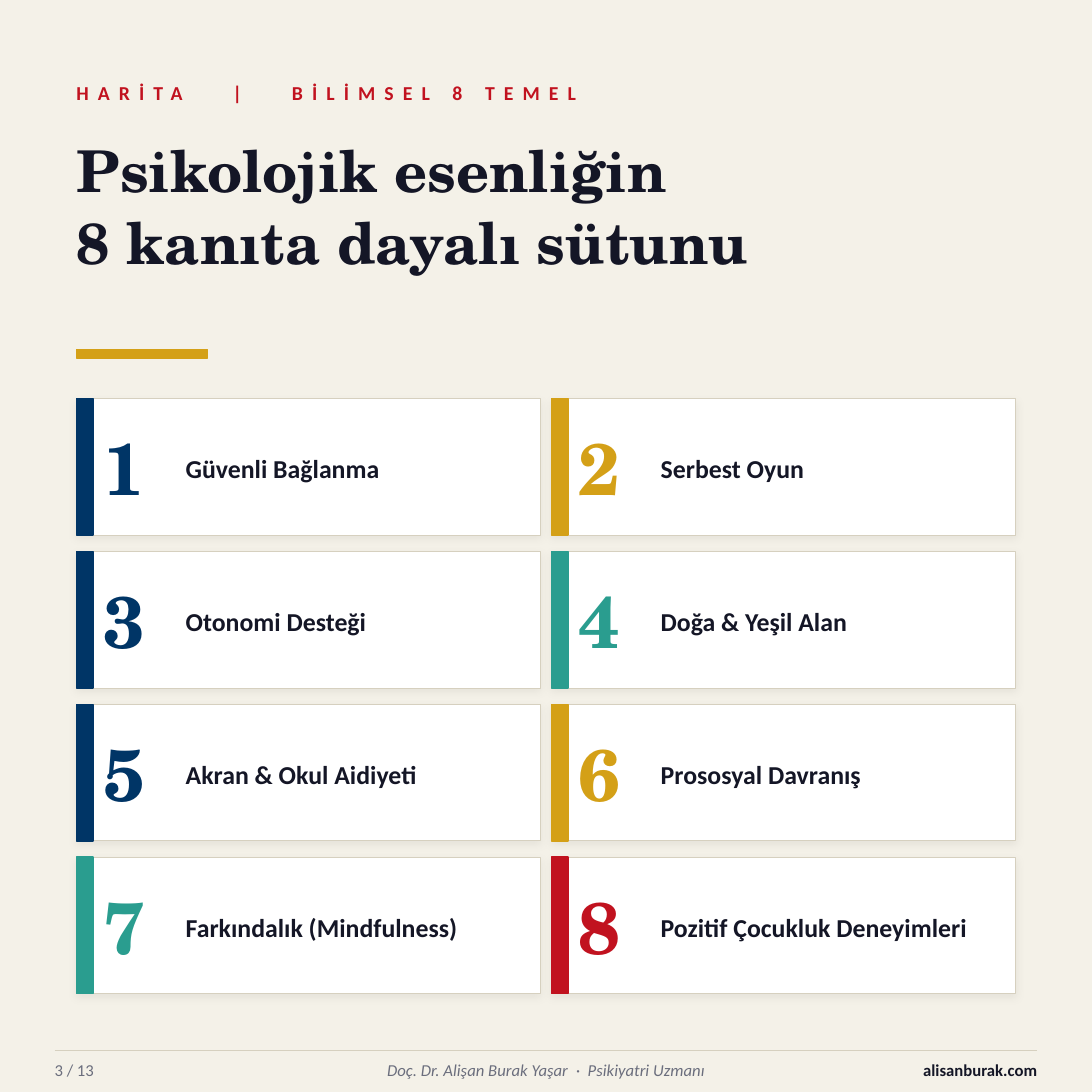
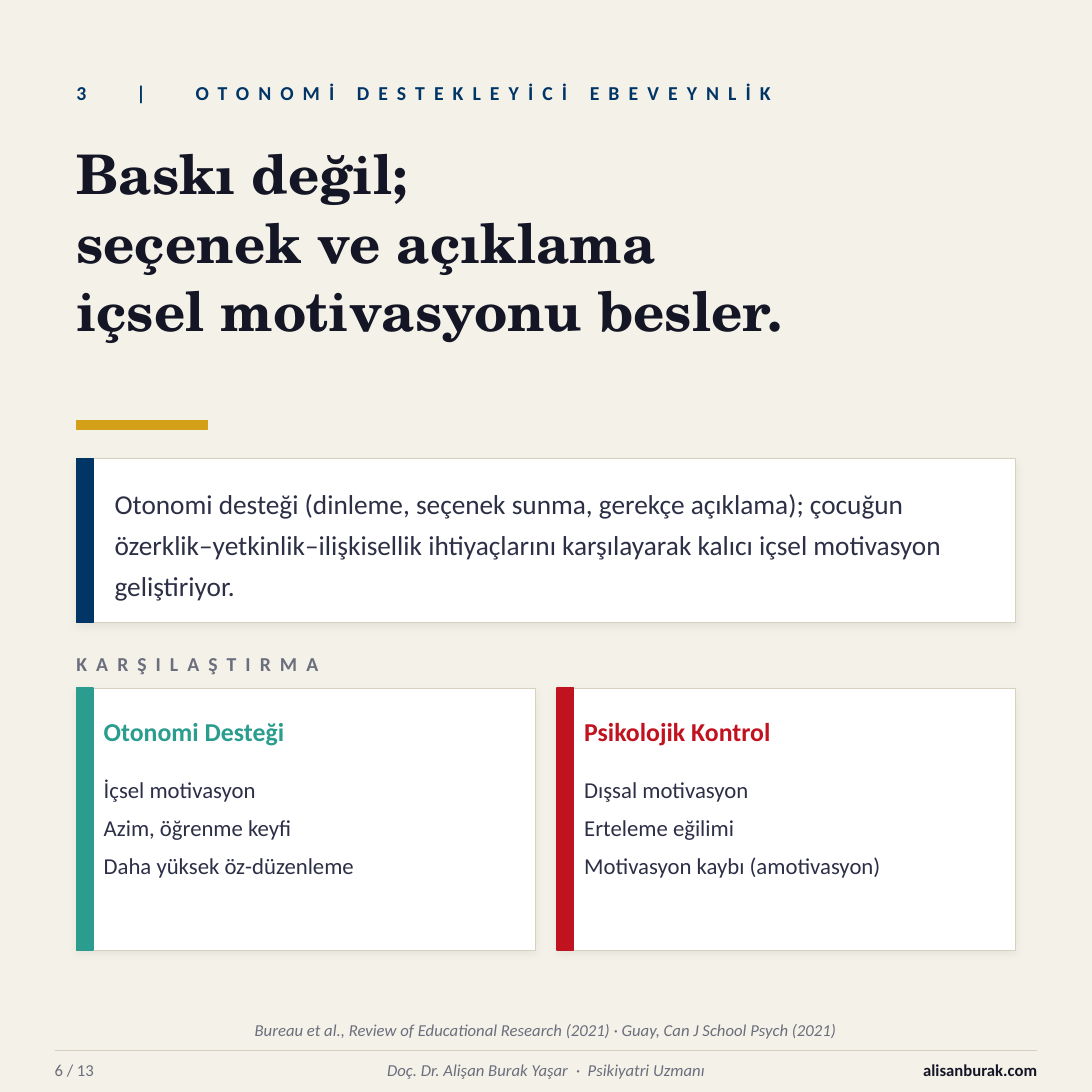
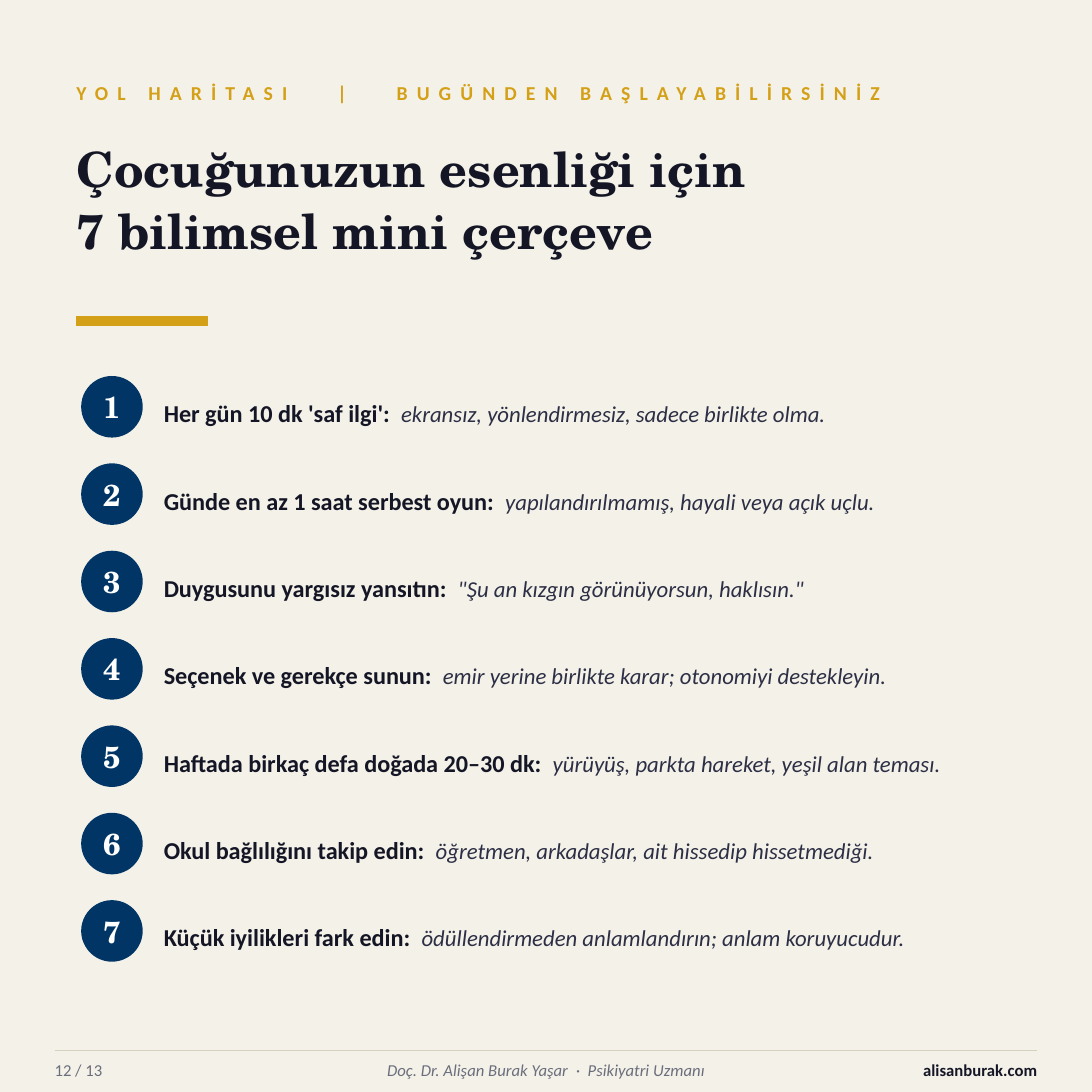
from dataclasses import dataclass

from lxml import etree
from pptx import Presentation
from pptx.dml.color import RGBColor
from pptx.enum.shapes import MSO_CONNECTOR, MSO_SHAPE
from pptx.enum.text import MSO_ANCHOR, PP_ALIGN
from pptx.oxml.ns import qn
from pptx.util import Inches, Pt

RECT, OVAL = MSO_SHAPE.RECTANGLE, MSO_SHAPE.OVAL
LINE = MSO_CONNECTOR.STRAIGHT
TOP, MIDDLE = MSO_ANCHOR.TOP, MSO_ANCHOR.MIDDLE
LEFT, CENTER, RIGHT = PP_ALIGN.LEFT, PP_ALIGN.CENTER, PP_ALIGN.RIGHT


@dataclass(frozen=True)
class Theme:
    paper: str = "F4F1E8"
    white: str = "FFFFFF"
    ink: str = "141626"
    body: str = "2C2F45"
    grey: str = "6B6E7D"
    rule: str = "D6D0BF"
    navy: str = "003566"
    gold: str = "D4A017"
    teal: str = "2A9D8F"
    red: str = "C1121F"
    sans: str = "Calibri"
    serif: str = "TeX Gyre Schola"
    huge: int = 48
    badge: int = 20
    lead: int = 18
    head: int = 17
    label: int = 16
    text: int = 15
    tag: int = 13
    small: int = 11
    track: int = 6


T = Theme()


def color(code):
    return RGBColor.from_string(code)


def write(frame, *lines, size=T.text, font=T.sans, ink=T.body, bold=False,
          italic=False, track=0, lead=None, align=LEFT, anchor=MIDDLE):
    frame.word_wrap = True
    frame.vertical_anchor = anchor
    frame.margin_left = frame.margin_right = 0
    frame.margin_top = frame.margin_bottom = 0
    base = dict(size=size, ink=ink, bold=bold, italic=italic, track=track)
    for i, line in enumerate(lines):
        para = frame.add_paragraph() if i else frame.paragraphs[0]
        para.alignment = align
        if lead:
            para.line_spacing = lead
        for words, extra in [(line, {})] if isinstance(line, str) else line:
            look = {**base, **extra}
            run = para.add_run()
            run.text = words
            run.font.name = font
            run.font.size = Pt(look["size"])
            run.font.color.rgb = color(look["ink"])
            run.font.bold = look["bold"]
            run.font.italic = look["italic"]
            if look["track"]:
                run._r.get_or_add_rPr().set("spc", str(round(look["track"] * 100)))


def split(left, mark, right, gap):
    space = (" ", {"track": gap})
    return [(left, {}), space, (mark, {}), space, (right, {})]


class Deck:
    def __init__(self):
        self.prs = Presentation()
        self.prs.slide_width = self.prs.slide_height = Inches(10)
        self.slide = None

    def page(self, num, tag, tint, title, size, top, bar):
        self.slide = self.prs.slides.add_slide(self.prs.slide_layouts[6])
        fill = self.slide.background.fill
        fill.solid()
        fill.fore_color.rgb = color(T.paper)
        self.text(0.7, 0.65, 8.6, 0.4, split(tag[0], "|", tag[1], 24),
                  size=T.tag, ink=tint, bold=True, track=T.track)
        self.text(0.7, top, 8.6, bar - top - 0.1, *title, size=size, font=T.serif,
                  ink=T.ink, bold=True, lead=1.05, anchor=TOP)
        self.shape(0.7, bar, 1.2, 0.08, T.gold)
        self.foot(num)

    def foot(self, num):
        self.rule(0.5, 9.62, 9.5)
        self.text(0.5, 9.65, 1.5, 0.3, f"{num} / 13", size=T.small, ink=T.grey)
        name = split("Doç. Dr. Alişan Burak Yaşar", "·", "Psikiyatri Uzmanı", 2.5)
        self.text(2, 9.65, 6, 0.3, name, size=T.small, ink=T.grey,
                  italic=True, align=CENTER)
        self.text(8, 9.65, 1.5, 0.3, "alisanburak.com", size=T.small, ink=T.ink,
                  bold=True, align=RIGHT)

    def text(self, x, y, w, h, *lines, **look):
        box = self.slide.shapes.add_textbox(Inches(x), Inches(y), Inches(w), Inches(h))
        write(box.text_frame, *lines, **look)

    def shape(self, x, y, w, h, fill, kind=RECT, edge=None, width=1):
        item = self.slide.shapes.add_shape(
            kind, Inches(x), Inches(y), Inches(w), Inches(h))
        item.fill.solid()
        item.fill.fore_color.rgb = color(fill)
        item.line.color.rgb = color(edge or fill)
        item.line.width = Pt(width)
        item.shadow.inherit = False
        return item

    def card(self, x, y, w, h, tint, shade=5):
        base = self.shape(x, y, w, h, T.white, edge=T.rule, width=0.5)
        glow = etree.SubElement(
            base._element.spPr.find(qn("a:effectLst")), qn("a:outerShdw"),
            blurRad=str(Pt(6)), dist=str(Pt(2)), dir="5400000",
            algn="bl", rotWithShape="0")
        black = etree.SubElement(glow, qn("a:srgbClr"), val="000000")
        etree.SubElement(black, qn("a:alpha"), val=str(shade * 1000))
        self.shape(x, y, 0.15, h, tint)

    def badge(self, x, y, num):
        disc = self.shape(x, y, 0.55, 0.55, T.navy, kind=OVAL)
        write(disc.text_frame, str(num), size=T.badge, font=T.serif,
              ink=T.white, bold=True, align=CENTER)

    def rule(self, x, y, end):
        line = self.slide.shapes.add_connector(
            LINE, Inches(x), Inches(y), Inches(end), Inches(y))
        line.line.color.rgb = color(T.rule)
        line.line.width = Pt(0.75)
        etree.SubElement(line._element.spPr, qn("a:effectLst"))


def pillars(deck):
    deck.page(3, ("HARİTA", "BİLİMSEL 8 TEMEL"), T.red,
              ("Psikolojik esenliğin", "8 kanıta dayalı sütunu"), 38, 1.2, 3.2)
    items = [
        ("Güvenli Bağlanma", T.navy), ("Serbest Oyun", T.gold),
        ("Otonomi Desteği", T.navy), ("Doğa & Yeşil Alan", T.teal),
        ("Akran & Okul Aidiyeti", T.navy), ("Prososyal Davranış", T.gold),
        ("Farkındalık (Mindfulness)", T.teal),
        ("Pozitif Çocukluk Deneyimleri", T.red),
    ]
    for i, (name, tint) in enumerate(items):
        row, col = divmod(i, 2)
        x, y = 0.7 + 4.35 * col, 3.65 + 1.4 * row
        deck.card(x, y, 4.25, 1.25, tint)
        deck.text(x + 0.25, y + 0.15, 0.7, 0.95, str(i + 1), size=T.huge,
                  font=T.serif, ink=tint, bold=True)
        deck.text(x + 1, y + 0.15, 3.15, 0.95, name, size=T.head,
                  ink=T.ink, bold=True, lead=1.1)


def choice(deck):
    deck.page(6, ("3", "OTONOMİ DESTEKLEYİCİ EBEVEYNLİK"), T.navy,
              ("Baskı değil;", "seçenek ve açıklama", "içsel motivasyonu besler."),
              36, 1.25, 3.85)
    deck.card(0.7, 4.2, 8.6, 1.5, T.navy, shade=6)
    deck.text(1.05, 4.3, 8.1, 1.3,
              "Otonomi desteği (dinleme, seçenek sunma, gerekçe açıklama); çocuğun "
              "özerklik–yetkinlik–ilişkisellik ihtiyaçlarını karşılayarak kalıcı "
              "içsel motivasyon geliştiriyor.", size=T.lead, lead=1.25)
    deck.text(0.7, 5.9, 8.6, 0.35, "KARŞILAŞTIRMA", size=T.tag, ink=T.grey,
              bold=True, track=T.track)
    sides = [
        ("Otonomi Desteği", T.teal,
         ("İçsel motivasyon", "Azim, öğrenme keyfi", "Daha yüksek öz-düzenleme")),
        ("Psikolojik Kontrol", T.red,
         ("Dışsal motivasyon", "Erteleme eğilimi", "Motivasyon kaybı (amotivasyon)")),
    ]
    for i, (name, tint, points) in enumerate(sides):
        x = 0.7 + 4.4 * i
        deck.card(x, 6.3, 4.2, 2.4, tint)
        deck.text(x + 0.25, 6.45, 3.9, 0.5, name, size=T.head, ink=tint, bold=True)
        deck.text(x + 0.25, 7, 3.9, 1.55, *points, lead=1.4, anchor=TOP)
    deck.text(0.5, 9.28, 9, 0.3,
              "Bureau et al., Review of Educational Research (2021) · "
              "Guay, Can J School Psych (2021)",
              size=T.small, ink=T.grey, italic=True, align=CENTER)


def steps(deck):
    deck.page(12, ("YOL HARİTASI", "BUGÜNDEN BAŞLAYABİLİRSİNİZ"), T.gold,
              ("Çocuğunuzun esenliği için", "7 bilimsel mini çerçeve"), 32, 1.25, 2.9)
    items = [
        ("Her gün 10 dk 'saf ilgi':",
         "ekransız, yönlendirmesiz, sadece birlikte olma."),
        ("Günde en az 1 saat serbest oyun:",
         "yapılandırılmamış, hayali veya açık uçlu."),
        ("Duygusunu yargısız yansıtın:",
         "\"Şu an kızgın görünüyorsun, haklısın.\""),
        ("Seçenek ve gerekçe sunun:",
         "emir yerine birlikte karar; otonomiyi destekleyin."),
        ("Haftada birkaç defa doğada 20–30 dk:",
         "yürüyüş, parkta hareket, yeşil alan teması."),
        ("Okul bağlılığını takip edin:",
         "öğretmen, arkadaşlar, ait hissedip hissetmediği."),
        ("Küçük iyilikleri fark edin:",
         "ödüllendirmeden anlamlandırın; anlam koruyucudur."),
    ]
    bold = dict(size=T.label, ink=T.ink, bold=True)
    for i, (name, note) in enumerate(items):
        y = 3.4 + 0.8 * i
        deck.badge(0.75, y + 0.05, i + 1)
        line = [(name, bold), (" ", {**bold, "track": 3.6}), (note, {"italic": True})]
        deck.text(1.5, y, 7.8, 0.7, line, lead=1.25)


def main():
    deck = Deck()
    for build in (pillars, choice, steps):
        build(deck)
    deck.prs.save("out.pptx")


if __name__ == "__main__":
    main()
